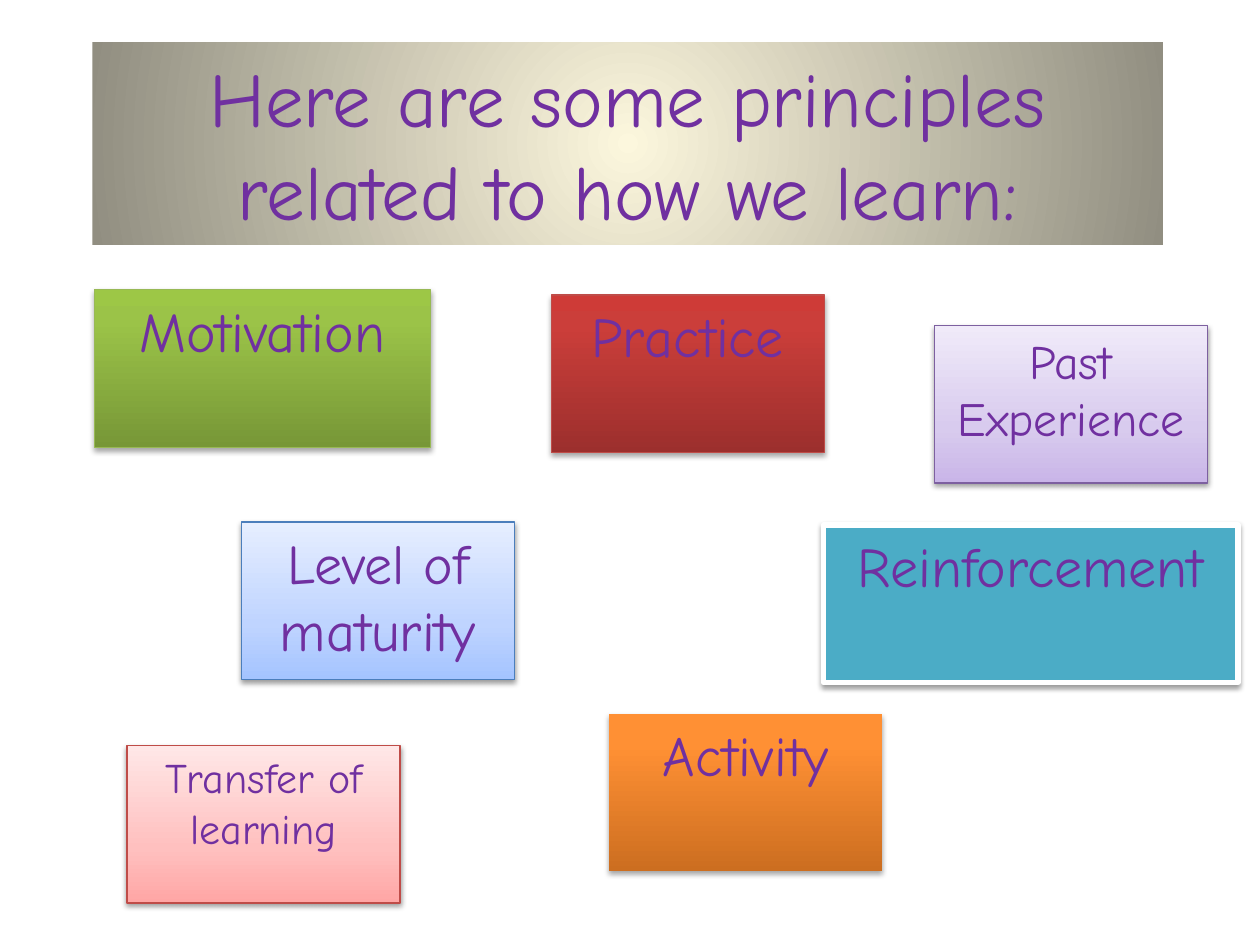
from pptx import Presentation
from pptx.dml.color import RGBColor
from pptx.enum.shapes import MSO_SHAPE as Shape
from pptx.enum.text import MSO_ANCHOR as Anchor, MSO_AUTO_SIZE as AutoSize, PP_ALIGN as Align
from pptx.oxml import parse_xml
from pptx.oxml.ns import nsdecls, qn
from pptx.util import Inches, Pt

COLORS = {
    "text": "7030A0", "white": "FFFFFF", "teal": "4BACC6",
    "cream": "FCF7DD", "stone": "918E81",
    "blue line": "4B7EBC", "red line": "BF4C48",
    "green line": "98B955", "violet line": "7D60A0",
}
GRADIENTS = {
    "blue": ("A4C4FF", "BFD4FF", "E6EEFF"),
    "rose": ("FFA6A5", "FFC0BF", "FFE7E7"),
    "violet": ("C9B5E8", "D8CBEE", "F0EAF9"),
    "red": ("9C2F2D", "CB3E3A", "CE3B37"),
    "green": ("779737", "9BC348", "9DC746"),
    "orange": ("CC6E20", "FF9034", "FF9136"),
}
PALE = ("blue", "rose", "violet")
RADIAL = '<a:path path="circle"><a:fillToRect l="50000" t="50000" r="50000" b="50000"/></a:path>'
UPWARD = '<a:lin ang="16200000" scaled="0"/>'


class PrinciplesSlide:
    font = "Comic Neue"
    columns, rows = 120, 90

    def __init__(self, deck):
        self.deck = deck
        self.page = deck.slides.add_slide(deck.slide_layouts[5])

    def place(self, left, top, width, height):
        column = self.deck.slide_width / self.columns
        row = self.deck.slide_height / self.rows
        return [int(n) for n in (left * column, top * row, width * column, height * row)]

    def gradient(self, shape, stops, direction):
        marks = "".join(
            f'<a:gs pos="{share * 1000}"><a:srgbClr val="{color}"/></a:gs>'
            for share, color in stops)
        shape.fill.solid()
        properties = shape._element.spPr
        properties.replace(properties.find(qn("a:solidFill")), parse_xml(
            f'<a:gradFill {nsdecls("a")} rotWithShape="1">'
            f'<a:gsLst>{marks}</a:gsLst>{direction}</a:gradFill>'))

    def shadow(self, shape, opacity, distance):
        shape.shadow.inherit = False
        shape._element.spPr.find(qn("a:effectLst")).append(parse_xml(
            f'<a:outerShdw {nsdecls("a")} blurRad="{Pt(3.1)}" dist="{Pt(distance)}" '
            f'dir="5400000" rotWithShape="0"><a:srgbClr val="000000">'
            f'<a:alpha val="{opacity * 1000}"/></a:srgbClr></a:outerShdw>'))

    def label(self, shape, text, size, anchor):
        frame = shape.text_frame
        frame.text = text
        frame.word_wrap = True
        frame.auto_size = AutoSize.NONE
        frame.vertical_anchor = anchor
        para = frame.paragraphs[0]
        para.alignment = Align.CENTER
        span = para.runs[0]
        span.font.name = self.font
        span.font.size = Pt(size)
        span.font.color.rgb = RGBColor.from_string(COLORS["text"])
        return para

    def title(self, text, area):
        title = self.page.shapes.title
        title.left, title.top, title.width, title.height = self.place(*area)
        self.gradient(title, [(0, COLORS["cream"]), (100, COLORS["stone"])], RADIAL)
        self.label(title, text, 44, Anchor.MIDDLE)

    def card(self, text, fill, line, left, top, width=26, size=32):
        box = self.page.shapes.add_shape(
            Shape.RECTANGLE, *self.place(left, top, width, 15))
        deep = fill in GRADIENTS and fill not in PALE
        if fill in GRADIENTS:
            shares = (0, 80 if deep else 35, 100)
            self.gradient(box, zip(shares, GRADIENTS[fill]), UPWARD)
        else:
            box.fill.solid()
            box.fill.fore_color.rgb = RGBColor.from_string(COLORS[fill])
        if line:
            box.line.color.rgb = RGBColor.from_string(COLORS[line])
            box.line.width = Pt(3 if line == "white" else 0.75)
        else:
            box.line.fill.background()
        self.shadow(box, *((35, 1.8) if deep else (38, 1.6)))
        para = self.label(box, text, size, Anchor.TOP)
        para.space_before = Pt(size * 0.2)


def main():
    deck = Presentation()
    deck.slide_width, deck.slide_height = Inches(10), Inches(7.5)
    slide = PrinciplesSlide(deck)
    slide.title("Here are some principles related to how we learn:", (8.8, 4, 102, 19.3))
    slide.card("Level of maturity", "blue", "blue line", 23, 49.7)
    slide.card("Practice", "red", "red line", 52.5, 28.1)
    slide.card("Motivation", "green", "green line", 9, 27.6, width=32)
    slide.card("Activity", "orange", None, 58, 68)
    slide.card("Transfer of learning", "rose", "red line", 12.1, 71, size=24)
    slide.card("Reinforcement", "teal", "white", 78.4, 50, width=39.5)
    slide.card("Past Experience", "violet", "violet line", 89, 31, size=27.2)
    deck.save("out.pptx")


if __name__ == "__main__":
    main()
